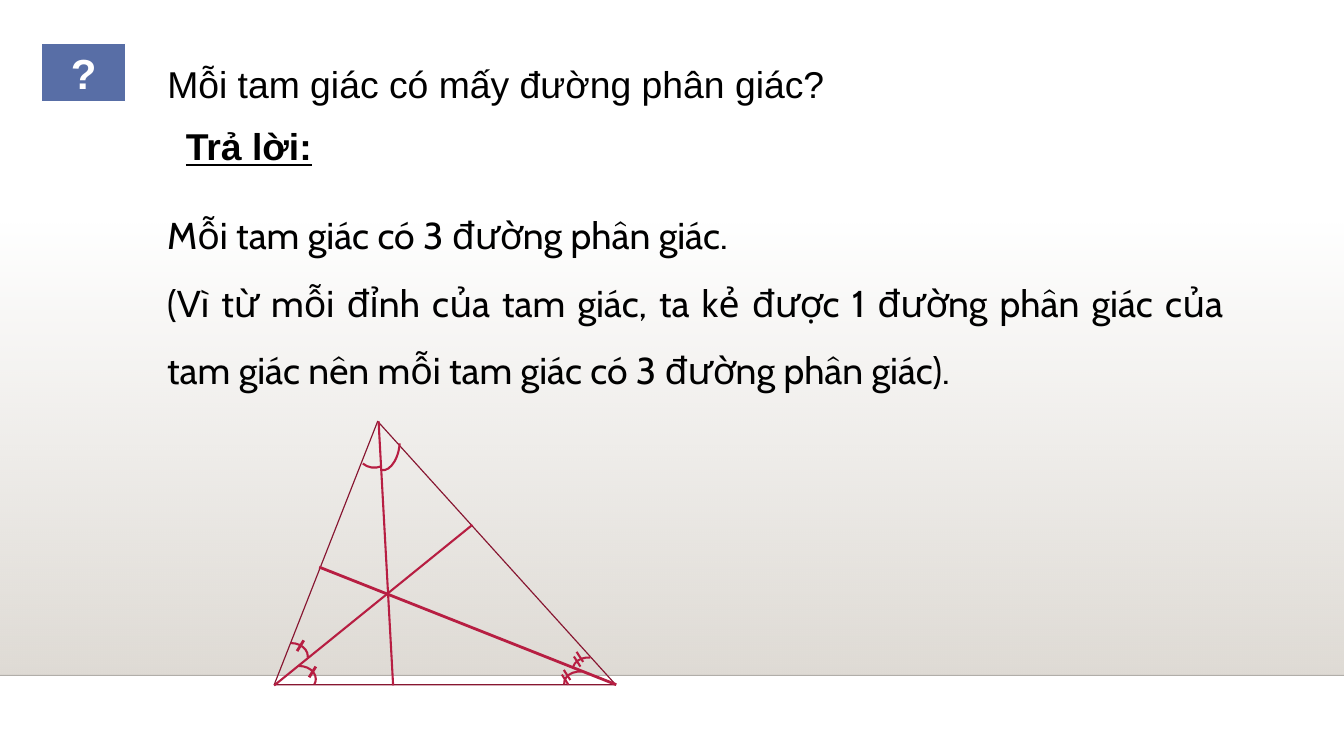
from pptx import Presentation
from pptx.dml.color import RGBColor
from pptx.enum.shapes import MSO_CONNECTOR, MSO_SHAPE
from pptx.enum.text import MSO_ANCHOR, MSO_AUTO_SIZE, PP_ALIGN
from pptx.oxml.ns import qn
from pptx.util import Pt
from lxml import etree

LINE = MSO_CONNECTOR.STRAIGHT
RECT, ARC = MSO_SHAPE.RECTANGLE, MSO_SHAPE.ARC
TRIANGLE = MSO_SHAPE.ISOSCELES_TRIANGLE
TOP, GROW = MSO_ANCHOR.TOP, MSO_AUTO_SIZE.SHAPE_TO_FIT_TEXT
LEFT, CENTER, JUSTIFY = PP_ALIGN.LEFT, PP_ALIGN.CENTER, PP_ALIGN.JUSTIFY

WIDE, HIGH = 1440, 810
RED, DARK, STONE = "B71E42", "871631", "DFDBD5"
ANSWER = [
    "Mỗi tam giác có 3 đường phân giác.",
    "(Vì từ mỗi đỉnh của tam giác, ta kẻ được 1 đường phân giác của "
    "tam giác nên mỗi tam giác có 3 đường phân giác).",
]


def color(code):
    return RGBColor.from_string(code)


def fade(node, share):
    """Set the opacity, in percent, of an srgbClr element."""
    etree.SubElement(node, qn("a:alpha")).set("val", str(share * 1000))


def add_line(shapes, start, end, code, width):
    line = shapes.add_connector(LINE, *[Pt(v) for v in (*start, *end)])
    line.line.color.rgb = color(code)
    line.line.width = Pt(width)
    etree.SubElement(line._element.spPr, qn("a:effectLst"))
    return line


def add_form(shapes, kind, box, code=None, width=0):
    """Add an unfilled preset shape, outlined if a colour is given."""
    form = shapes.add_shape(kind, *[Pt(v) for v in box])
    form.shadow.inherit = False
    form.fill.background()
    if code:
        form.line.color.rgb = color(code)
        form.line.width = Pt(width)
    else:
        form.line.fill.background()
    return form


def write(shape, texts, size=40, face="Arial", code="000000", align=LEFT,
          bold=False, under=False, space=1.0, after=0, wrap=True):
    frame = shape.text_frame
    frame.word_wrap = wrap
    frame.auto_size = GROW
    frame.text = "\n".join(texts)
    for para in frame.paragraphs:
        para.alignment = align
        para.line_spacing = space
        para.space_after = Pt(after)
        font = para.font
        font.name, font.size = face, Pt(size)
        font.bold, font.underline = bold, under
        font.color.rgb = color(code)


def add_floor(shapes, box):
    """Draw the fading band and the rule along its foot."""
    x, y, w, h = box
    band = add_form(shapes, RECT, box)
    band.fill.gradient()
    band.fill.gradient_angle = 270
    for stop, place in zip(band.fill.gradient_stops, (0, 1)):
        stop.position = place
        stop.color.rgb = color(STONE)
    tints = band._element.spPr.iter(qn("a:srgbClr"))
    fade(next(tints), 0)
    rule = add_line(shapes, (x, y + h), (x + w, y + h), "000001", 1)
    fade(next(rule._element.spPr.iter(qn("a:srgbClr"))), 20)


def add_title(slide, box):
    title = slide.shapes.title
    title.left, title.top, title.width, title.height = map(Pt, box)
    write(title, ["Mỗi tam giác có mấy đường phân giác?"],
          align=JUSTIFY, space=1.5, after=6, wrap=False)
    title.text_frame.vertical_anchor = TOP


def add_badge(shapes, box):
    badge = add_form(shapes, RECT, box, "FFFFFF", 1.75)
    badge.fill.solid()
    badge.fill.fore_color.rgb = color("586EA6")
    write(badge, ["?"], size=45, code="FFFFFF", align=CENTER, bold=True)


def add_answer(shapes, box):
    x, y, w, h = box
    label = shapes.add_textbox(Pt(x + 20), Pt(y), Pt(174), Pt(55.4))
    write(label, ["Trả lời:"], bold=True, under=True)
    body = shapes.add_textbox(Pt(x), Pt(y + 71.3), Pt(w), Pt(h - 71.3))
    write(body, ANSWER, face="Cabin", align=JUSTIFY, space=1.5)


def add_figure(shapes, box):
    """Draw the triangle, its three bisectors and the equal-angle marks."""
    x, y, w, h = box
    group = shapes.add_group_shape().shapes
    apex = 0.303
    outline = add_form(group, TRIANGLE, box, DARK, 1.25)
    outline.adjustments[0] = apex

    def draw(start, end, width):
        add_line(group, (x + start[0], y + start[1]),
                 (x + end[0], y + end[1]), RED, width)

    draw((apex * w + 1, 0), (127.4, h + 0.8), 2.25)
    draw((0, h + 0.8), (212.4, 110.9), 2.25)
    draw((w + 0.7, h), (48.2, 156.2), 3)

    arcs = [  # left, top, width, height, turn, start, end
        (96.5, 15.8, 48.2, 25.9, 102.7, 142.02, 0),
        (87.1, 7.9, 39.6, 41.8, 172.8, 154.59, 187.96),
        (0, 237.6, 36, 28.1, 0, 162, 2.43),
        (8.6, 262.1, 36, 28.1, 0, 162, 11.33),
        (325.4, 247.7, 30.2, 41.8, 285.6, 162, 202.72),
        (316.1, 262.8, 30.2, 41.8, 285.6, 155.76, 202.72),
    ]
    for left, top, wide, high, turn, start, end in arcs:
        arc = add_form(group, ARC, (x + left, y + top, wide, high), RED, 2.25)
        arc.rotation = turn
        arc.adjustments[0], arc.adjustments[1] = start, end

    for left, top in [(31.7, 234.7), (44.6, 262.8)]:
        draw((left, top), (left - 7.2, top + 11.5), 3)
    for left, top in [(324, 247), (321.1, 252), (310.3, 266.4), (308.2, 271.4)]:
        draw((left, top), (left + 7, top + 10.8), 2.25)


def main():
    deck = Presentation()
    deck.slide_width, deck.slide_height = Pt(WIDE), Pt(HIGH)
    slide = deck.slides.add_slide(deck.slide_layouts[5])
    shapes = slide.shapes
    add_floor(shapes, (0, 238.3, WIDE, 485.3))
    add_title(slide, (172, 38.2, 726.5, 79.9))
    add_badge(shapes, (44.6, 46.8, 90, 61.9))
    add_answer(shapes, (172, 128.9, 1146.2, 288))
    add_figure(shapes, (293.8, 451.4, 365.8, 282.2))
    deck.save("out.pptx")


if __name__ == "__main__":
    main()
